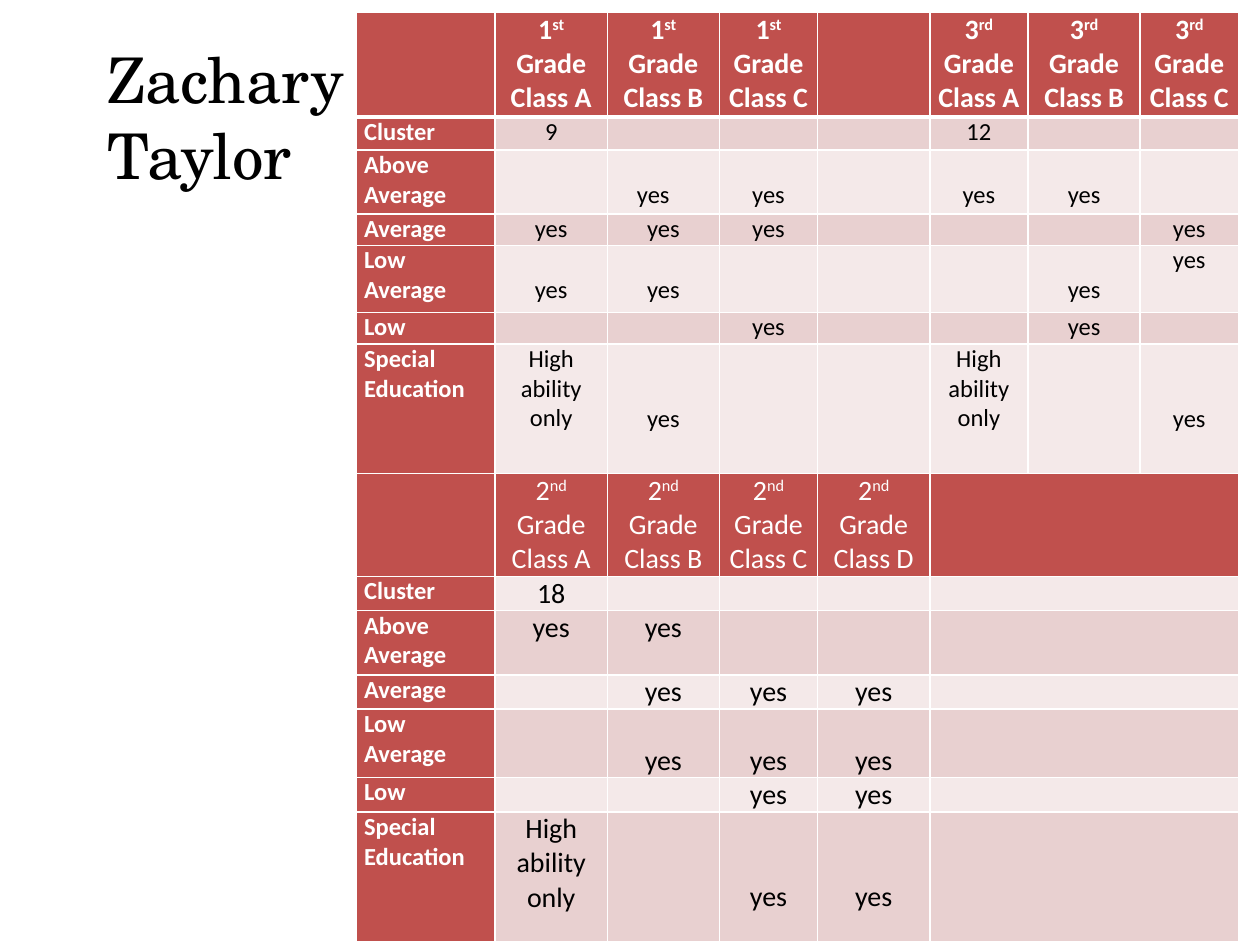
from typing import NamedTuple

from lxml.etree import SubElement as Sub
from pptx import Presentation
from pptx.dml.color import RGBColor
from pptx.enum.text import MSO_ANCHOR as Anchor, PP_ALIGN as Align
from pptx.oxml.ns import qn
from pptx.util import Inches, Pt

RED, WHITE, BLACK = "C0504D", "FFFFFF", "000000"
BANDS = ("E8D0D0", "F4E9E9")
FONT = "Calibri"
PAD = 0.06
LEAD = 1.22  # line height as a share of the type size
COLS = (1.1, 0.89, 0.89, 0.78, 0.89, 0.78, 0.89, 0.78)


class Entry(NamedTuple):
    text: str = ""
    drop: int = 0  # lines left free above the text
    right: float = PAD


class Head(NamedTuple):
    num: str
    suffix: str
    group: str


class Level(NamedTuple):
    name: str
    height: float
    cells: dict[int, Entry]


class Block(NamedTuple):
    height: float
    heads: dict[int, Head]
    levels: list[Level]
    size: int
    bold: bool
    band: int  # band of the first level
    span: bool  # join the last three columns
    rule: int  # width of the line under the heads


YES, LOWER, LOWEST = Entry("yes"), Entry("yes", 1), Entry("yes", 2)
HIGH = Entry("High ability only")

FIRST = Block(0.83, {
    **{i + 1: Head("1", "st", g) for i, g in enumerate("ABC")},
    **{i + 5: Head("3", "rd", g) for i, g in enumerate("ABC")},
}, [
    Level("Cluster", 0.26, {1: Entry("9"), 5: Entry("12")}),
    Level("Above Average", 0.51, {2: Entry("yes", 1, 0.22), 3: LOWER,
                                  5: LOWER, 6: LOWER}),
    Level("Average", 0.25, {1: YES, 2: YES, 3: YES, 7: YES}),
    Level("Low Average", 0.53, {1: LOWER, 2: LOWER, 6: LOWER, 7: YES}),
    Level("Low", 0.25, {3: YES, 6: YES}),
    Level("Special Education", 1.03, {1: HIGH, 2: LOWEST, 5: HIGH,
                                      7: LOWEST}),
], 14, True, 0, False, 3)

SECOND = Block(0.78, {
    i + 1: Head("2", "nd", g) for i, g in enumerate("ABCD")
}, [
    Level("Cluster", 0.26, {1: Entry("18")}),
    Level("Above Average", 0.51, {1: YES, 2: YES}),
    Level("Average", 0.25, {2: YES, 3: YES, 4: YES}),
    Level("Low Average", 0.53, {2: LOWER, 3: LOWER, 4: LOWER}),
    Level("Low", 0.25, {3: YES, 4: YES}),
    Level("Special Education", 1.03, {1: HIGH, 3: LOWEST, 4: LOWEST}),
], 16, False, 1, True, 1)


def color(code: str) -> RGBColor:
    return RGBColor.from_string(code)


def style(font, size: int, code: str, bold: bool = False,
          face: str = FONT) -> None:
    font.name, font.size, font.bold = face, Pt(size), bold
    font.color.rgb = color(code)


def base(cell, fill: str, top: int = 1, bottom: int = 1) -> None:
    """Set margins, borders and fill of a cell."""
    cell.margin_left = cell.margin_right = Inches(PAD)
    cell.margin_top = cell.margin_bottom = 0
    props = cell._tc.get_or_add_tcPr()
    for side, width in zip("LRTB", (1, 1, top, bottom)):
        line = Sub(props, qn(f"a:ln{side}"), w=str(Pt(width)))
        Sub(Sub(line, qn("a:solidFill")), qn("a:srgbClr"), val=WHITE)
    cell.fill.solid()
    cell.fill.fore_color.rgb = color(fill)
    # Small type in empty cells keeps the rows low
    Sub(cell.text_frame.paragraphs[0]._p, qn("a:endParaRPr"), sz="1200")


def write(cell, entry: Entry, size: int) -> None:
    cell.margin_top = Pt(entry.drop * size * LEAD)
    cell.margin_right = Inches(entry.right)
    para = cell.text_frame.paragraphs[0]
    para.text = entry.text
    para.alignment = Align.CENTER
    style(para.runs[0].font, size, BLACK)


def label(cell, text: str) -> None:
    cell.text_frame.text = text
    style(cell.text_frame.paragraphs[0].runs[0].font, 14, WHITE, True)


def head(cell, item: Head, bold: bool) -> None:
    frame = cell.text_frame
    for text in (item.num, item.suffix, " Grade"):
        frame.paragraphs[0].add_run().text = text
    frame.add_paragraph().text = f"Class {item.group}"
    for para in frame.paragraphs:
        para.alignment = Align.CENTER
        for run in para.runs:
            style(run.font, 16, WHITE, bold)
    frame.paragraphs[0].runs[1]._r.get_or_add_rPr().set("baseline", "30000")


def draw(table, start: int, block: Block) -> None:
    """Fill the rows of one block, heads first."""
    heights = [block.height] + [lev.height for lev in block.levels]
    for i, height in enumerate(heights):
        row = start + i
        table.rows[row].height = Inches(height)
        for col in range(len(COLS)):
            red = i == 0 or col == 0
            base(table.cell(row, col),
                 RED if red else BANDS[(block.band + i - 1) % 2],
                 block.rule if i == 1 else 1, block.rule if i == 0 else 1)
        if block.span:
            table.cell(row, 5).merge(table.cell(row, 7))
    for col, item in block.heads.items():
        head(table.cell(start, col), item, block.bold)
    for row, level in enumerate(block.levels, start + 1):
        label(table.cell(row, 0), level.name)
        for col, entry in level.cells.items():
            write(table.cell(row, col), entry, block.size)


def main() -> None:
    deck = Presentation()
    deck.slide_width, deck.slide_height = Inches(10), Inches(7.5)
    slide = deck.slides.add_slide(deck.slide_layouts[5])

    # Title
    title = slide.shapes.title
    title.left, title.top = Inches(0.75), Inches(0.3)
    title.width, title.height = Inches(2.19), Inches(1.25)
    frame = title.text_frame
    frame.text = "Zachary Taylor"
    frame.word_wrap = True
    frame.vertical_anchor = Anchor.MIDDLE
    frame.paragraphs[0].alignment = Align.LEFT
    style(frame.paragraphs[0].runs[0].font, 36, BLACK, face="TeX Gyre Schola")

    # Class table
    count = 2 + len(FIRST.levels) + len(SECOND.levels)
    table = slide.shapes.add_table(count, len(COLS), Inches(2.83), Inches(0.1),
                                   Inches(sum(COLS)), Inches(7.34)).table
    table.first_row = table.horz_banding = False
    for col, width in zip(table.columns, COLS):
        col.width = Inches(width)
    draw(table, 0, FIRST)
    draw(table, 1 + len(FIRST.levels), SECOND)

    deck.save("out.pptx")


if __name__ == "__main__":
    main()
